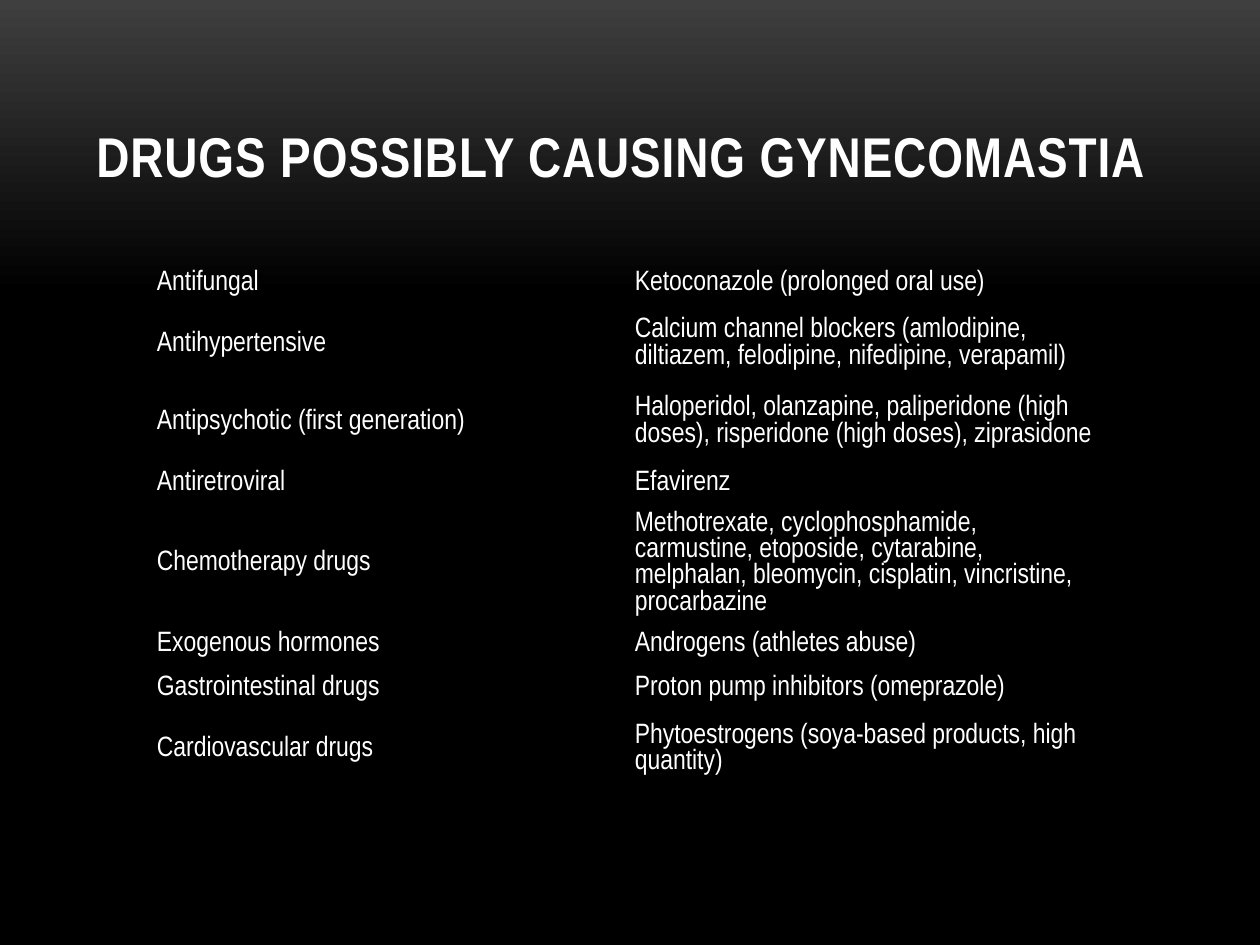
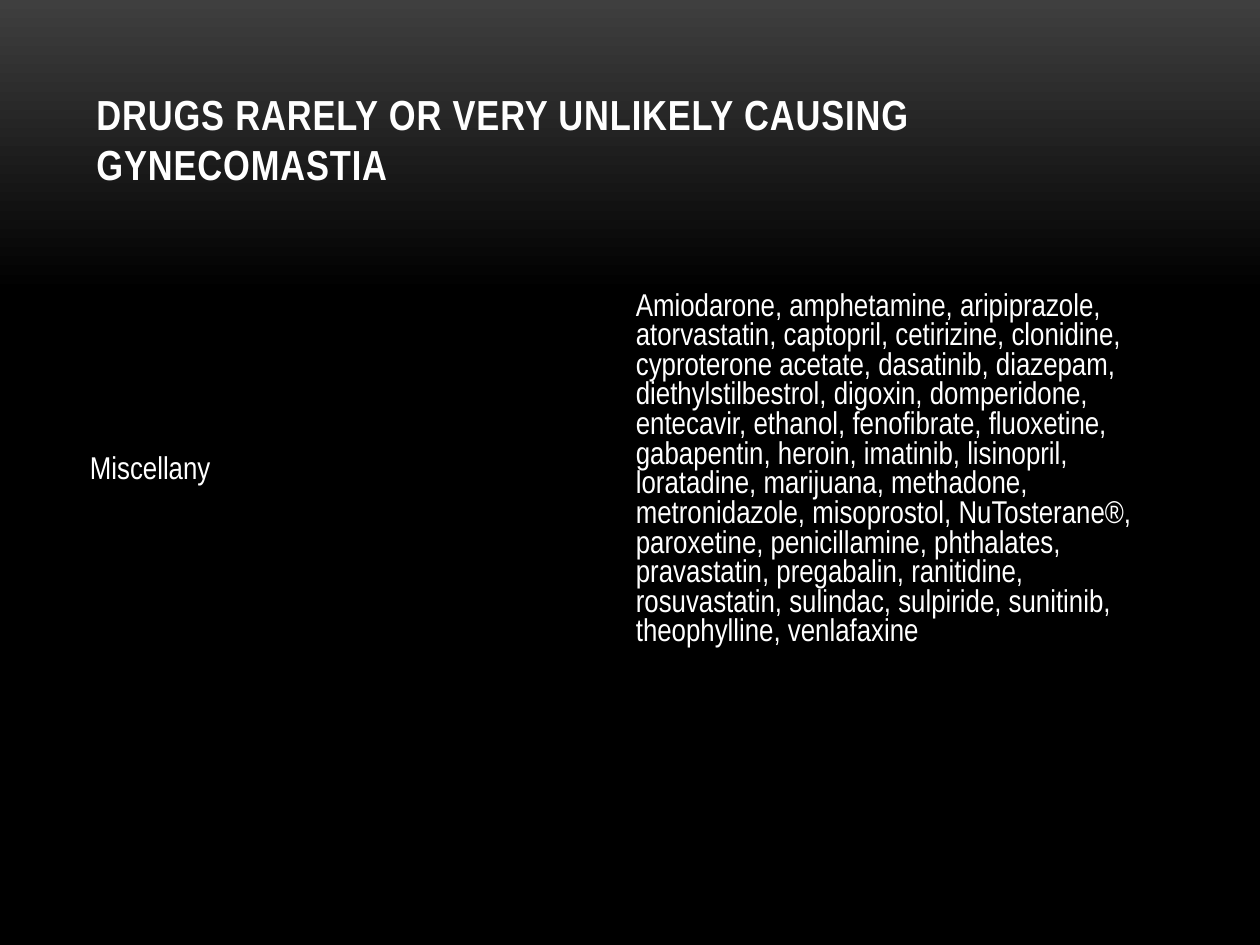
from copy import deepcopy
from dataclasses import dataclass
from pptx import Presentation
from pptx.dml.color import RGBColor
from pptx.enum.text import MSO_ANCHOR
from pptx.oxml.ns import qn
from pptx.util import Pt

# Content: title, title size, text size, table left, top, column width, rows;
# each row is its height and its two cells, an empty heading row comes first
PAGES = [
    ("DRUGS POSSIBLY CAUSING GYNECOMASTIA", 32, 16, 151, 217, 478, [
        (44, "", ""),
        (44, "Antifungal", "Ketoconazole (prolonged oral use)"),
        (78, "Antihypertensive",
         "Calcium channel blockers (amlodipine, diltiazem, felodipine, "
         "nifedipine, verapamil)"),
        (78, "Antipsychotic (first generation)",
         "Haloperidol, olanzapine, paliperidone (high doses), "
         "risperidone (high doses), ziprasidone"),
        (44, "Antiretroviral", "Efavirenz"),
        (117, "Chemotherapy drugs",
         "Methotrexate, cyclophosphamide, carmustine, etoposide, cytarabine, "
         "melphalan, bleomycin, cisplatin, vincristine, procarbazine"),
        (44, "Exogenous hormones", "Androgens (athletes abuse)"),
        (44, "Gastrointestinal drugs", "Proton pump inhibitors (omeprazole)"),
        (78, "Cardiovascular drugs",
         "Phytoestrogens (soya-based products, high quantity)"),
    ]),
    ("DRUGS RARELY OR VERY UNLIKELY CAUSING GYNECOMASTIA", 24, 18, 84, 246, 546, [
        (41, "", ""),
        (368, "Miscellany",
         "Amiodarone, amphetamine, aripiprazole, atorvastatin, captopril, "
         "cetirizine, clonidine, cyproterone acetate, dasatinib, diazepam, "
         "diethylstilbestrol, digoxin, domperidone, entecavir, ethanol, "
         "fenofibrate, fluoxetine, gabapentin, heroin, imatinib, lisinopril, "
         "loratadine, marijuana, methadone, metronidazole, misoprostol, "
         "NuTosterane®, paroxetine, penicillamine, phthalates, pravastatin, "
         "pregabalin, ranitidine, rosuvastatin, sulindac, sulpiride, "
         "sunitinib, theophylline, venlafaxine"),
    ]),
]


@dataclass(frozen=True)
class Theme:
    face: str = "Arial Narrow"
    ink: RGBColor = RGBColor(255, 255, 255)
    glow: RGBColor = RGBColor(63, 63, 63)
    dark: RGBColor = RGBColor(0, 0, 0)
    fade: float = 0.31
    lead: float = 0.94
    track: str = "50"
    plain: str = "{2D5ABB26-0587-4C30-8999-92F81FD0307C}"


LOOK = Theme()
WIDE, HIGH = 1260, 945
HEAD = (84, 38, 1092, 157)
INSET = 6


def px(n):
    return round(n * 914400 / 126)


def style(para, size, bold=False):
    font = para.font
    font.name, font.size, font.bold = LOOK.face, Pt(size), bold
    font.color.rgb = LOOK.ink


# Shared background: a glow at the top that fades to black
def paint(master):
    fill = master.background.fill
    fill.gradient()
    fill.gradient_angle = 270
    top, end = fill.gradient_stops
    top.color.rgb, end.color.rgb = LOOK.glow, LOOK.dark
    top.position, end.position = 0, LOOK.fade
    stops = master.element.find(".//" + qn("a:gsLst"))
    last = deepcopy(stops[1])
    last.set("pos", "100000")
    stops.append(last)


# Title standing on the bottom of its box
def add_title(slide, text, size):
    frame = slide.shapes.add_textbox(*map(px, HEAD)).text_frame
    frame.word_wrap = True
    frame.vertical_anchor = MSO_ANCHOR.BOTTOM
    para = frame.paragraphs[0]
    run = para.add_run()
    run.text = text
    run._r.get_or_add_rPr().set("spc", LOOK.track)
    style(para, size, True)


# Two equal columns under a merged heading row, with tight fixed lines
def add_grid(slide, size, left, top, col, rows):
    high = sum(row[0] for row in rows)
    box = (left, top, 2 * col, high)
    table = slide.shapes.add_table(len(rows), 2, *map(px, box)).table
    table.first_row = table.horz_banding = False
    table._tbl.tblPr.find(qn("a:tableStyleId")).text = LOOK.plain
    for part in table.columns:
        part.width = px(col)
    for r, (tall, *texts) in enumerate(rows):
        table.rows[r].height = px(tall)
        for c, text in enumerate(texts):
            cell = table.cell(r, c)
            cell.fill.background()
            cell.vertical_anchor = MSO_ANCHOR.MIDDLE
            cell.margin_left = cell.margin_right = px(INSET)
            cell.margin_top = cell.margin_bottom = px(INSET if text else 0)
            if text:
                cell.text = text
            para = cell.text_frame.paragraphs[0]
            para.line_spacing = Pt(size * LOOK.lead)
            style(para, size)
    table.cell(0, 0).merge(table.cell(0, 1))


def main():
    deck = Presentation()
    deck.slide_width, deck.slide_height = px(WIDE), px(HIGH)
    paint(deck.slide_master)
    for title, big, *grid in PAGES:
        slide = deck.slides.add_slide(deck.slide_layouts[6])
        add_title(slide, title, big)
        add_grid(slide, *grid)
    deck.save("out.pptx")


if __name__ == "__main__":
    main()
